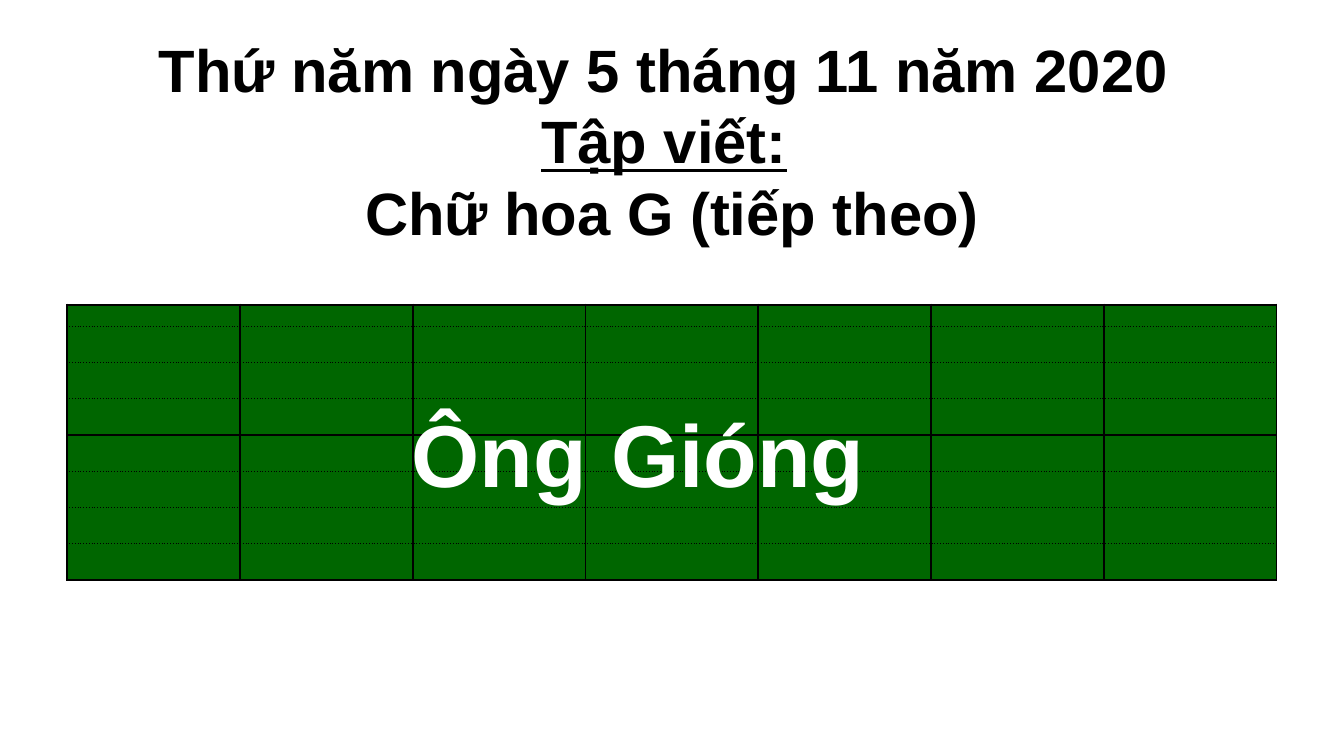
from dataclasses import dataclass

from lxml.etree import SubElement
from pptx import Presentation
from pptx.dml.color import RGBColor
from pptx.enum.text import MSO_ANCHOR, MSO_AUTO_SIZE, PP_ALIGN
from pptx.oxml.ns import qn
from pptx.util import Pt


@dataclass(frozen=True)
class Theme:
    font: str = "Arial"
    ink: RGBColor = RGBColor(0x00, 0x00, 0x00)
    chalk: RGBColor = RGBColor(0xFF, 0xFF, 0xFF)
    board: RGBColor = RGBColor(0x00, 0x66, 0x00)
    heading: Pt = Pt(32)
    word: Pt = Pt(47)
    cell: Pt = Pt(6)
    upright: Pt = Pt(1)
    dotted: Pt = Pt(0.5)
    solid: Pt = Pt(1.5)


THEME = Theme()
COLUMNS = 7
ROWS_PER_BAND = 4
BANDS = 2


def set_font(p, color, size):
    p.font.name = THEME.font
    p.font.bold = True
    p.font.color.rgb = color
    p.font.size = size


def add_border(cell, side, width, dash="solid"):
    """Side is one of L, R, T, B; call in that order and before the fill."""
    ln = SubElement(cell._tc.get_or_add_tcPr(), qn(f"a:ln{side}"), w=str(int(width)))
    fill = SubElement(ln, qn("a:solidFill"))
    SubElement(fill, qn("a:srgbClr"), val=str(THEME.ink))
    SubElement(ln, qn("a:prstDash"), val=dash)


def style_cell(cell, row):
    """Dotted writing lines, with a solid rule around each band of rows."""
    dotted, solid = (THEME.dotted, "sysDot"), (THEME.solid, "solid")
    place = row % ROWS_PER_BAND
    add_border(cell, "L", THEME.upright)
    add_border(cell, "R", THEME.upright)
    add_border(cell, "T", *(solid if place == 0 else dotted))
    add_border(cell, "B", *(solid if place == ROWS_PER_BAND - 1 else dotted))
    cell.fill.solid()
    cell.fill.fore_color.rgb = THEME.board
    cell.margin_left = cell.margin_right = cell.margin_top = cell.margin_bottom = 0
    p = cell.text_frame.paragraphs[0]
    p._p.get_or_add_endParaRPr().set("sz", str(int(THEME.cell.pt * 100)))


def add_writing_board(s, left, top, width, height):
    rows = BANDS * ROWS_PER_BAND
    first = Pt(11.5)
    table = s.shapes.add_table(rows, COLUMNS, left, top, width, height).table
    for column in table.columns:
        column.width = width // COLUMNS
    for i, row in enumerate(table.rows):
        row.height = first if i == 0 else (height - first) // (rows - 1)
        for cell in row.cells:
            style_cell(cell, i)


def add_sample_word(s, left, top, width, height):
    tf = s.shapes.add_textbox(left, top, width, height).text_frame
    tf.word_wrap = True
    tf.auto_size = MSO_AUTO_SIZE.SHAPE_TO_FIT_TEXT
    p = tf.paragraphs[0]
    p.line_spacing = 2.3
    p.space_before = Pt(9)
    set_font(p, THEME.chalk, THEME.word)
    indent = p.add_run()
    indent.text = " "
    indent.font.size = THEME.heading
    p.add_run().text = "Ông Gióng"


def add_heading(s, left, top, width, height):
    tf = s.shapes.add_textbox(left, top, width, height).text_frame
    tf.word_wrap = False
    tf.auto_size = MSO_AUTO_SIZE.SHAPE_TO_FIT_TEXT
    tf.vertical_anchor = MSO_ANCHOR.MIDDLE
    lines = [
        [("Thứ năm ngày 5 tháng 11 năm 2020 ", False)],
        [("Tập viết:", True), (" ", False)],
        [("Chữ hoa G (tiếp theo)", False)],
    ]
    for i, runs in enumerate(lines):
        p = tf.add_paragraph() if i else tf.paragraphs[0]
        p.alignment = PP_ALIGN.CENTER
        set_font(p, THEME.ink, THEME.heading)
        for text, underlined in runs:
            r = p.add_run()
            r.text = text
            if underlined:
                r.font.underline = True


def main():
    prs = Presentation()
    prs.slide_width, prs.slide_height = Pt(720), Pt(405)
    s = prs.slides.add_slide(prs.slide_layouts[6])
    add_writing_board(s, Pt(36), Pt(163.3), Pt(648), Pt(147.6))
    add_sample_word(s, Pt(204.5), Pt(137.5), Pt(274.5), Pt(119.5))
    add_heading(s, Pt(64), Pt(13), Pt(592.5), Pt(124))
    prs.save("out.pptx")


if __name__ == "__main__":
    main()
